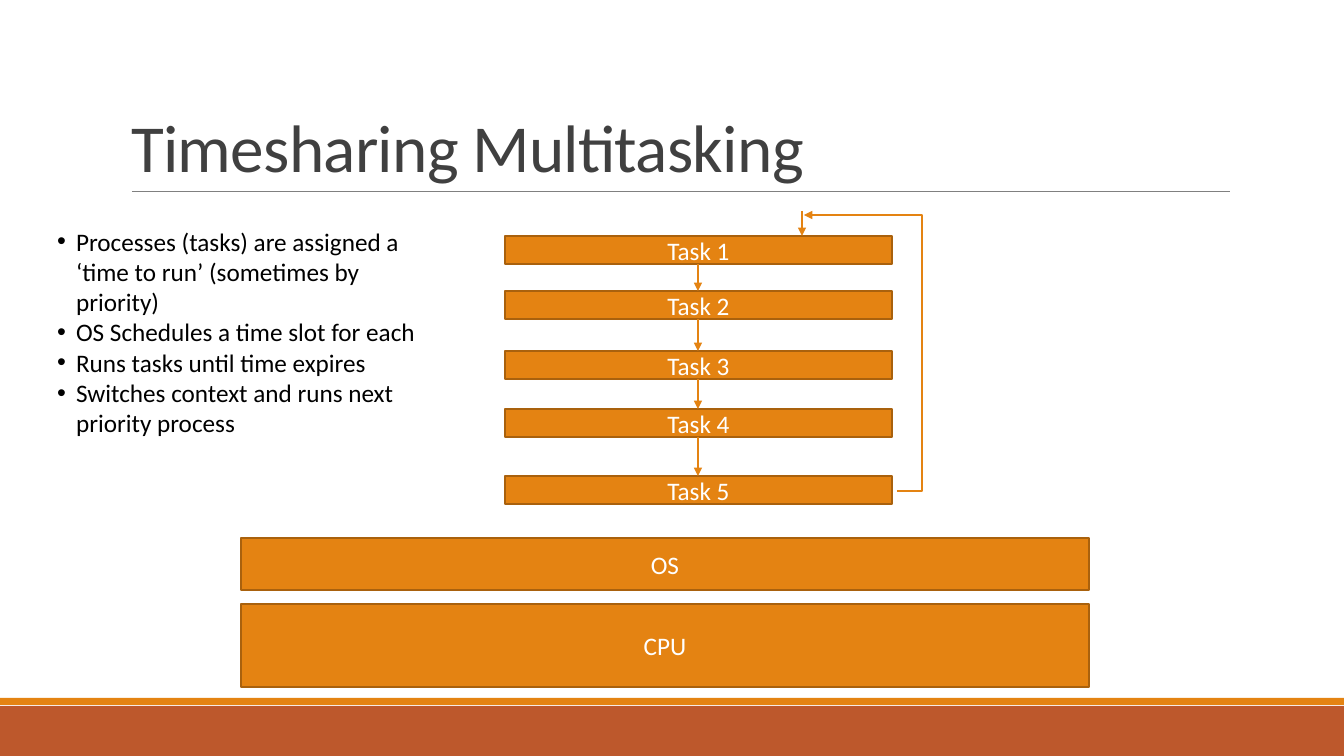
from itertools import pairwise

from lxml.etree import SubElement
from pptx import Presentation
from pptx.dml.color import RGBColor
from pptx.enum.shapes import MSO_CONNECTOR as Connector, MSO_SHAPE as Shape
from pptx.enum.text import MSO_ANCHOR as Anchor, MSO_AUTO_SIZE as AutoSize, PP_ALIGN as Align
from pptx.oxml.ns import qn
from pptx.util import Emu, Pt

FONT = "Calibri"
COLORS = {
    "orange": "E48312",
    "outline": "A9610D",
    "rust": "BD582C",
    "rule": "808080",
    "title": "404040",
    "black": "000000",
    "white": "FFFFFF",
}
SLIDE_WIDTH, SLIDE_HEIGHT = 1344, 756
TASK_LEFT, TASK_WIDTH, TASK_HEIGHT = 505, 387, 28
TASK_TOPS = [236, 291, 351, 409, 476]
POINTS = [
    "Processes (tasks) are assigned a ‘time to run’ (sometimes by priority)",
    "OS Schedules a time slot for each",
    "Runs tasks until time expires",
    "Switches context and runs next priority process",
]


def px(length):
    return Emu(round(length * 914400 / 100.8))


def color(name):
    return RGBColor.from_string(COLORS[name])


def place(shape, left, top, width, height):
    shape.left, shape.top = px(left), px(top)
    shape.width, shape.height = px(width), px(height)


def format_runs(paragraph, size, color_name):
    for run in paragraph.runs:
        run.font.name = FONT
        run.font.size = Pt(size)
        run.font.color.rgb = color(color_name)


def add_title(slide, text):
    title = slide.shapes.title
    place(title, 121, 31, 1109, 160)
    frame = title.text_frame
    frame.text = text
    frame.auto_size = AutoSize.NONE
    frame.vertical_anchor = Anchor.BOTTOM
    paragraph = frame.paragraphs[0]
    paragraph.alignment = Align.LEFT
    paragraph.line_spacing = 0.85
    format_runs(paragraph, 48, "title")
    paragraph.runs[0].font._element.set("spc", "-50")


def add_bullets(slide, points):
    body = slide.placeholders[1]
    place(body, 47, 221, 387, 224)
    frame = body.text_frame
    frame.text = "\n".join(points)
    frame.word_wrap = True
    frame.auto_size = AutoSize.SHAPE_TO_FIT_TEXT
    for paragraph in frame.paragraphs:
        paragraph.space_before = Pt(0)
        format_runs(paragraph, 18, "black")
        properties = paragraph._p.get_or_add_pPr()
        properties.set("marL", str(px(19)))
        properties.set("indent", str(-px(19)))
        SubElement(properties, qn("a:buFont"), typeface="Arial")
        SubElement(properties, qn("a:buChar"), char="•")


def add_bar(slide, left, top, width, height, fill):
    bar = slide.shapes.add_shape(Shape.RECTANGLE, px(left), px(top), px(width), px(height))
    bar.shadow.inherit = False
    bar.fill.solid()
    bar.fill.fore_color.rgb = color(fill)
    bar.line.fill.background()
    return bar


def add_box(slide, text, left, top, width, height):
    box = add_bar(slide, left, top, width, height, "orange")
    box.line.color.rgb = color("outline")
    box.line.width = Pt(1.25)
    frame = box.text_frame
    frame.text = text
    frame.vertical_anchor = Anchor.MIDDLE
    frame.paragraphs[0].alignment = Align.CENTER
    format_runs(frame.paragraphs[0], 18, "white")


def add_line(slide, start, end, line_color, width, kind=Connector.STRAIGHT):
    line = slide.shapes.add_connector(kind, *map(px, start + end))
    line.line.color.rgb = color(line_color)
    line.line.width = Pt(width)
    SubElement(line._element.spPr, qn("a:effectLst"))
    return line


def add_arrow(slide, start, end, kind=Connector.STRAIGHT):
    arrow = add_line(slide, start, end, "orange", 1, kind)
    SubElement(arrow._element.spPr.find(qn("a:ln")), qn("a:tailEnd"), type="triangle")
    return arrow


def add_loop(slide, start, end, outer_x):
    loop = add_arrow(slide, start, end, Connector.ELBOW)
    bend = round(100000 * (outer_x - start[0]) / (end[0] - start[0]))
    geometry = loop._element.spPr.find(qn("a:prstGeom"))
    adjustments = geometry.find(qn("a:avLst"))
    if adjustments is None:
        adjustments = SubElement(geometry, qn("a:avLst"))
    SubElement(adjustments, qn("a:gd"), name="adj1", fmla=f"val {bend}")


def main():
    presentation = Presentation()
    presentation.slide_width = px(SLIDE_WIDTH)
    presentation.slide_height = px(SLIDE_HEIGHT)
    slide = presentation.slides.add_slide(presentation.slide_layouts[1])

    # Footer bands and title rule
    add_bar(slide, 0, 706, SLIDE_WIDTH, 50, "rust")
    add_bar(slide, 0, 698, SLIDE_WIDTH, 7, "orange")
    add_line(slide, (132, 191), (1230, 191), "rule", 0.5)

    # Title and list
    add_title(slide, "Timesharing Multitasking")
    add_bullets(slide, POINTS)

    # System layers
    add_box(slide, "CPU", 241, 604, 848, 83)
    add_box(slide, "OS", 241, 538, 848, 52)

    # Tasks, each leading to the next
    for number, top in enumerate(TASK_TOPS, start=1):
        add_box(slide, f"Task {number}", TASK_LEFT, top, TASK_WIDTH, TASK_HEIGHT)
    center = TASK_LEFT + TASK_WIDTH // 2
    for top, next_top in pairwise(TASK_TOPS):
        add_arrow(slide, (center, top + TASK_HEIGHT), (center, next_top))

    # Return from the last task to the first
    add_loop(slide, (897, 491), (804, 215), outer_x=922)
    add_arrow(slide, (802, 211), (802, TASK_TOPS[0]))

    presentation.save("out.pptx")


if __name__ == "__main__":
    main()
